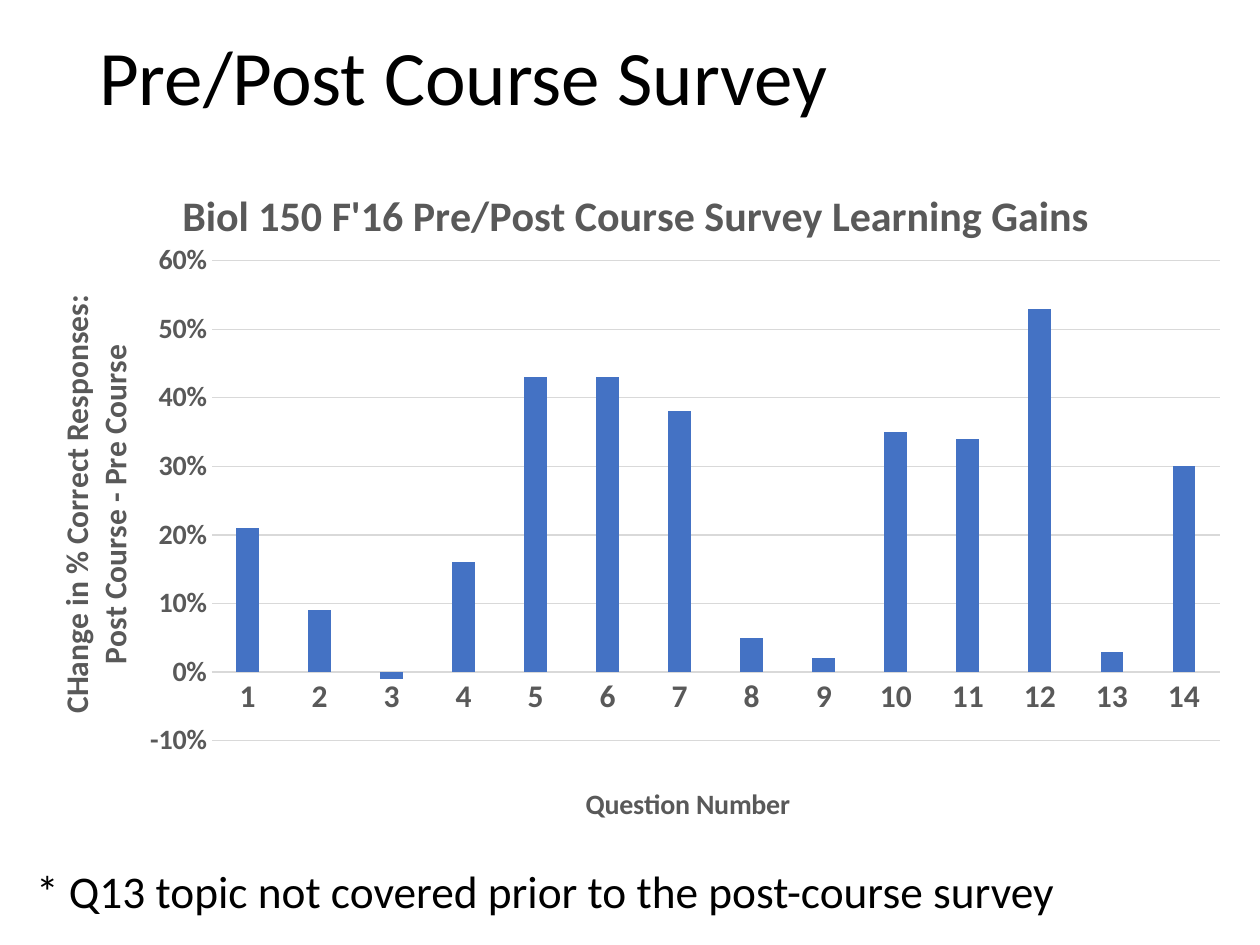
from lxml import etree
from pptx import Presentation
from pptx import util as u
from pptx.chart.data import CategoryChartData
from pptx.dml.color import RGBColor
from pptx.enum import chart as ch, text
from pptx.oxml import ns

COLORS = {"ink": "000000", "label": "595959", "grid": "D9D9D9", "bar": "4472C4"}
GAINS = [0.21, 0.09, -0.01, 0.16, 0.43, 0.43, 0.38,
         0.05, 0.02, 0.35, 0.34, 0.53, 0.03, 0.3]


class Deck:
    font = "Calibri"

    def __init__(self, width, height):
        self.prs = Presentation()
        self.prs.slide_width, self.prs.slide_height = u.Cm(width), u.Cm(height)
        self.s = self.prs.slides.add_slide(self.prs.slide_layouts[6])

    def style(self, font, size, color, bold=False):
        font.name, font.size, font.bold = self.font, u.Pt(size), bold
        font.color.rgb = RGBColor.from_string(COLORS[color])

    def line(self, fmt, color):
        fmt.line.color.rgb = RGBColor.from_string(COLORS[color])
        fmt.line.width = u.Pt(0.75)

    def text(self, box, words, size, anchor):
        sp = self.s.shapes.add_textbox(*map(u.Cm, box))
        tf = sp.text_frame
        tf.word_wrap, tf.vertical_anchor = True, anchor
        p = tf.paragraphs[0]
        p.text, p.line_spacing = words, 0.9
        self.style(p.font, size, "ink")

    def layout(self, element, index, **values):
        for old in element.findall(ns.qn("c:layout")):
            element.remove(old)
        layout = etree.Element(ns.qn("c:layout"))
        manual = etree.SubElement(layout, ns.qn("c:manualLayout"))
        for tag, value in values.items():
            etree.SubElement(manual, ns.qn(f"c:{tag}")).set("val", str(value))
        element.insert(index, layout)

    def chart_title(self, title, words, size, x, y, turn=0):
        tf = title.text_frame
        tf.text = words
        for p in tf.paragraphs:
            self.style(p.font, size, "label", True)
        for body in title.element.iter(ns.qn("a:bodyPr")):
            body.set("rot", str(turn * 60000))
        self.layout(title.element, 1, xMode="edge", yMode="edge", x=x, y=y)

    def axis(self, axis, size):
        axis.major_tick_mark = axis.minor_tick_mark = ch.XL_TICK_MARK.NONE
        self.style(axis.tick_labels.font, size, "label", True)

    def column_chart(self, box, values):
        data = CategoryChartData(number_format="0%")
        data.categories = [str(n) for n in range(1, len(values) + 1)]
        data.add_series("Series 1", values)
        chart = self.s.shapes.add_chart(
            ch.XL_CHART_TYPE.COLUMN_CLUSTERED, *map(u.Cm, box), data).chart
        self.style(chart.font, 10, "ink")
        chart.has_legend = False
        plot = chart.plots[0]
        plot.gap_width, plot.overlap, plot.vary_by_categories = 219, -27, False
        series = plot.series[0]
        series.invert_if_negative = False
        series.format.fill.solid()
        series.format.fill.fore_color.rgb = RGBColor.from_string(COLORS["bar"])
        self.layout(chart.element.find(".//" + ns.qn("c:plotArea")), 0,
                    layoutTarget="inner", xMode="edge", yMode="edge",
                    x=0.16, y=0.166, w=0.82, h=0.688)
        return chart


def main():
    deck = Deck(25.4, 19.05)
    deck.text((1.75, 0.33, 21.89, 2.59), "Pre/Post Course Survey", 44,
              text.MSO_ANCHOR.MIDDLE)
    deck.text((0.48, 17.4, 21.89, 1.37),
              "* Q13 topic not covered prior to the post-course survey", 25.9,
              text.MSO_ANCHOR.TOP)

    chart = deck.column_chart((0.3, 2.92, 24.79, 14.07), GAINS)
    questions, gains = chart.category_axis, chart.value_axis
    deck.axis(questions, 18)
    deck.line(questions.format, "grid")
    deck.axis(gains, 16)
    gains.format.line.fill.background()
    gains.minimum_scale, gains.maximum_scale, gains.major_unit = -0.1, 0.6, 0.1
    gains.tick_labels.number_format = "0%"
    gains.tick_labels.number_format_is_linked = False
    deck.line(gains.major_gridlines.format, "grid")

    chart.has_title = True
    deck.chart_title(chart.chart_title,
                     "Biol 150 F'16 Pre/Post Course Survey Learning Gains",
                     24, 0.13, 0.05)
    deck.chart_title(questions.axis_title, "Question Number", 16, 0.46, 0.91)
    deck.chart_title(gains.axis_title,
                     "CHange in % Correct Responses:\nPost Course - Pre Course",
                     18, 0.03, 0.21, -90)
    deck.prs.save("out.pptx")


if __name__ == "__main__":
    main()
